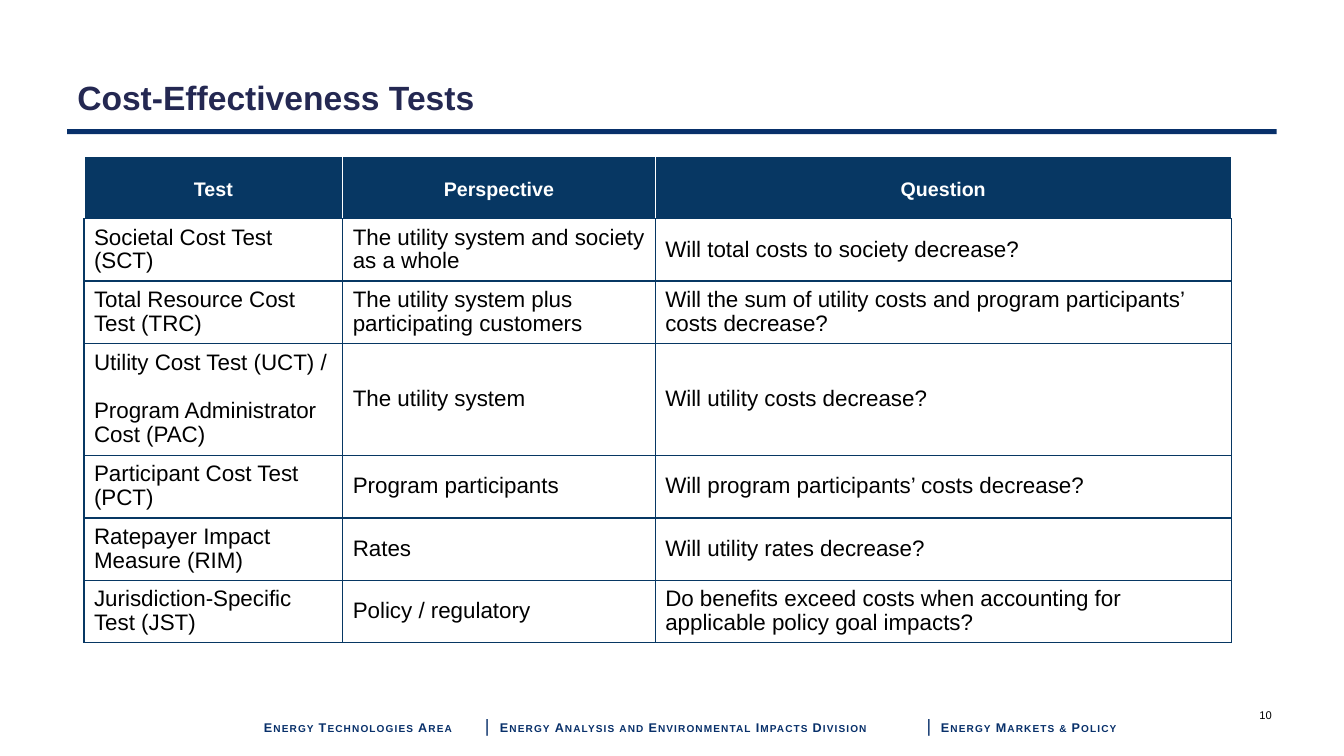
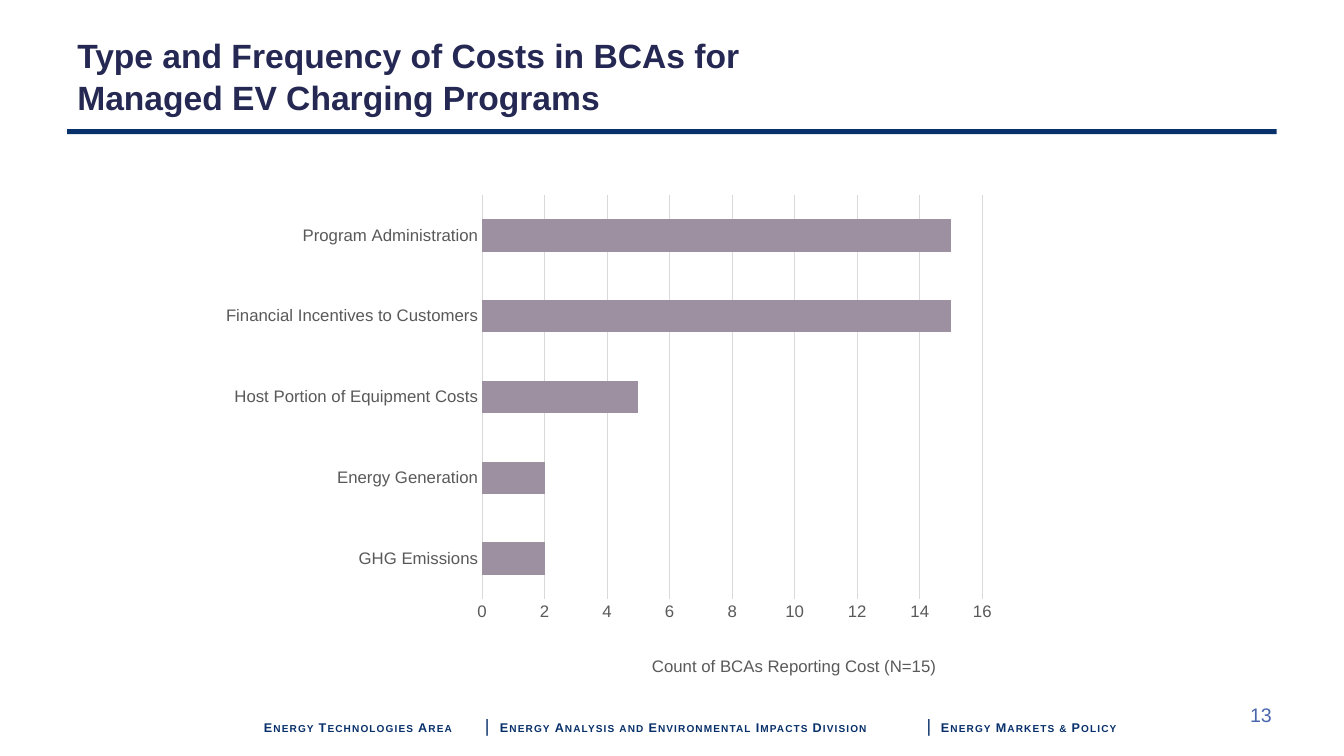
"""Builds two slides on cost-effectiveness tests and managed charging costs."""
import functools

import lxml.etree
import pptx
import pptx.chart.data
import pptx.dml.color
import pptx.enum.chart
import pptx.enum.shapes
import pptx.enum.text
import pptx.oxml.ns
import pptx.util

RGBColor = pptx.dml.color.RGBColor
ALIGN = pptx.enum.text.PP_ALIGN
ANCHOR = pptx.enum.text.MSO_ANCHOR
TICK = pptx.enum.chart.XL_TICK_MARK

NAVY = RGBColor(0x08, 0x30, 0x6A)
TABLE_NAVY = RGBColor(0x07, 0x37, 0x63)
TITLE_INK = RGBColor(0x24, 0x28, 0x52)
PAGE_BLUE = RGBColor(0x4A, 0x66, 0xAC)
MAUVE = RGBColor(0x9D, 0x90, 0xA0)
AXIS_GRAY = RGBColor(0x59, 0x59, 0x59)
GRID_GRAY = RGBColor(0xD9, 0xD9, 0xD9)
BLACK = RGBColor(0, 0, 0)
WHITE = RGBColor(0xFF, 0xFF, 0xFF)

COLUMNS, ROWS = 160, 90
CELL = pptx.util.Inches(7.5) // ROWS


def grid(*counts):
    return [pptx.util.Emu(round(count * CELL)) for count in counts]


def apply(target, values):
    for name, value in values.items():
        *parents, last = name.split(".")
        setattr(functools.reduce(getattr, parents, target), last, value)


def text_format(size, color, bold=False):
    return {"name": "Arial", "size": pptx.util.Pt(size), "bold": bold, "color.rgb": color}


def add_element(parent, tag, position=None, **attributes):
    element = lxml.etree.Element(pptx.oxml.ns.qn(tag), attributes)
    parent.insert(len(parent) if position is None else position, element)
    return element


def set_layout(parent, position, **shares):
    for old in parent.findall(pptx.oxml.ns.qn("c:layout")):
        parent.remove(old)
    manual = add_element(add_element(parent, "c:layout", position), "c:manualLayout")
    if "w" in shares:
        add_element(manual, "c:layoutTarget", val="inner")
    for axis in "xy":
        add_element(manual, f"c:{axis}Mode", val="edge")
    for name, share in shares.items():
        add_element(manual, f"c:{name}", val=str(share))


class Deck:
    """Holds the shared style and the current slide."""

    title_font = text_format(24, TITLE_INK, True)
    header_font = text_format(14, WHITE, True)
    body_font = text_format(16, BLACK)
    axis_font = text_format(12, AXIS_GRAY)
    footer_fonts = {"|": text_format(16, NAVY)}
    footer_font = text_format(9, NAVY, True)
    footer_parts = ["Energy Technologies Area", "|",
                    "Energy Analysis and Environmental Impacts Division", "|",
                    "Energy Markets & Policy"]
    footer_tabs = [26.3, 28.1, 78.9, 80.6]

    def __init__(self):
        self.presentation = pptx.Presentation()
        apply(self.presentation, {"slide_width": CELL * COLUMNS, "slide_height": CELL * ROWS})
        self.slide = None

    def new_slide(self, title, page, page_font):
        self.slide = self.presentation.slides.add_slide(self.presentation.slide_layouts[5])
        self.rule()
        self.footer()
        self.title(title)
        self.page_number(page, page_font)

    def rule(self):
        shape = self.slide.shapes.add_shape(
            pptx.enum.shapes.MSO_SHAPE.RECTANGLE, *grid(8, 15.36, 144, 0.6))
        shape.shadow.inherit = False
        shape.fill.solid()
        shape.fill.fore_color.rgb = NAVY
        shape.line.fill.background()

    def title(self, text):
        shape = self.slide.shapes.title
        height = 1.1 + 4.9 * len(text.splitlines())
        place = zip(("left", "top", "width", "height"), grid(8, 14.6 - height, 144, height))
        apply(shape, dict(place))
        apply(shape.text_frame, {"vertical_anchor": ANCHOR.BOTTOM, "word_wrap": True,
                                 "auto_size": pptx.enum.text.MSO_AUTO_SIZE.NONE})
        paragraph = shape.text_frame.paragraphs[0]
        paragraph.text = text
        apply(paragraph, {"alignment": ALIGN.LEFT, "line_spacing": 1.04})
        for run in paragraph.runs:
            apply(run.font, self.title_font)

    def text_box(self, place, frame_format):
        frame = self.slide.shapes.add_textbox(*grid(*place)).text_frame
        apply(frame, {"word_wrap": True, **frame_format})
        return frame.paragraphs[0]

    def footer(self):
        paragraph = self.text_box((30.24, 83.9, 110, 5.8), {})
        tabs = add_element(paragraph._p.get_or_add_pPr(), "a:tabLst")
        for stop in grid(*self.footer_tabs):
            add_element(tabs, "a:tab", pos=str(stop), algn="l")
        for index, part in enumerate(self.footer_parts):
            run = paragraph.add_run()
            run.text = "\t" + part if index else part
            apply(run.font, self.footer_fonts.get(part, self.footer_font))
            run._r.get_or_add_rPr().attrib.update({"cap": "small", "spc": "80"})

    def page_number(self, number, font):
        paragraph = self.text_box((146.6, 82.7, 6, 4.8), {"vertical_anchor": ANCHOR.MIDDLE})
        paragraph.alignment = ALIGN.RIGHT
        run = paragraph.add_run()
        run.text = str(number)
        apply(run.font, font)

    def cell(self, cell, text, is_header):
        cell.fill.solid()
        cell.fill.fore_color.rgb = TABLE_NAVY if is_header else WHITE
        side, edge = (0.07, 0) if is_header else (0.1, 0.05)
        side, edge = pptx.util.Inches(side), pptx.util.Inches(edge)
        apply(cell, {"margin_left": side, "margin_right": side, "margin_top": edge,
                     "margin_bottom": edge, "vertical_anchor": ANCHOR.MIDDLE})
        cell.text_frame.text = text
        for index, paragraph in enumerate(cell.text_frame.paragraphs):
            apply(paragraph, {"alignment": ALIGN.CENTER if is_header else ALIGN.LEFT,
                              "line_spacing": 1.25 if is_header else 0.96})
            if index:
                paragraph.space_before = pptx.util.Pt(17.6)
            apply(paragraph.runs[0].font, self.header_font if is_header else self.body_font)
        for position, border in enumerate("LRTB"):
            color = WHITE if is_header and border != "B" else TABLE_NAVY
            line = add_element(cell._tc.get_or_add_tcPr(), f"a:ln{border}", position, w="12700")
            add_element(add_element(line, "a:solidFill"), "a:srgbClr", val=str(color))

    def table(self, left, top, widths, heights, rows):
        place = grid(left, top, sum(widths), sum(heights))
        table = self.slide.shapes.add_table(len(rows), len(widths), *place).table
        table.horz_banding = False
        for column, width in zip(table.columns, grid(*widths)):
            column.width = width
        for row, height, texts in zip(table.rows, grid(*heights), rows):
            row.height = height
            for cell, text in zip(row.cells, texts):
                self.cell(cell, text, texts is rows[0])

    def bar_chart(self, place, counts, axis_title):
        data = pptx.chart.data.CategoryChartData()
        data.categories = list(counts)
        data.add_series("Series 1", list(counts.values()))
        chart = self.slide.shapes.add_chart(
            pptx.enum.chart.XL_CHART_TYPE.BAR_STACKED, *grid(*place), data).chart
        apply(chart, {"has_legend": False, "has_title": False})
        apply(chart.font, self.axis_font)
        plot = chart.plots[0]
        apply(plot, {"gap_width": 150, "overlap": 100, "vary_by_categories": False})
        fill = plot.series[0].format.fill
        fill.solid()
        fill.fore_color.rgb = MAUVE
        categories, values = chart.category_axis, chart.value_axis
        for axis in (categories, values):
            apply(axis, {"major_tick_mark": TICK.NONE, "minor_tick_mark": TICK.NONE})
            apply(axis.tick_labels.font, self.axis_font)
        apply(values, {"minimum_scale": 0, "maximum_scale": 16, "major_unit": 2,
                       "has_major_gridlines": True})
        for line in (categories.format.line, values.major_gridlines.format.line):
            apply(line, {"width": pptx.util.Pt(0.75), "color.rgb": GRID_GRAY})
        values.format.line.fill.background()
        run = values.axis_title.text_frame.paragraphs[0].add_run()
        run.text = axis_title
        apply(run.font, self.axis_font)
        set_layout(values.axis_title._element, 1, x=0.55, y=0.95)
        plot_area = chart._chartSpace.chart.plotArea
        set_layout(plot_area, 0, x=0.341, y=0.021, w=0.627, h=0.82)


TESTS = [
    ("Test", "Perspective", "Question"),
    ("Societal Cost Test (SCT)", "The utility system and society as a whole",
     "Will total costs to society decrease?"),
    ("Total Resource Cost Test (TRC)", "The utility system plus participating customers",
     "Will the sum of utility costs and program participants’ costs decrease?"),
    ("Utility Cost Test (UCT) /\nProgram Administrator Cost (PAC)", "The utility system",
     "Will utility costs decrease?"),
    ("Participant Cost Test (PCT)", "Program participants",
     "Will program participants’ costs decrease?"),
    ("Ratepayer Impact Measure (RIM)", "Rates", "Will utility rates decrease?"),
    ("Jurisdiction-Specific Test (JST)", "Policy / regulatory",
     "Do benefits exceed costs when accounting for applicable policy goal impacts?"),
]
COST_COUNTS = {
    "GHG Emissions": 2,
    "Energy Generation": 2,
    "Host Portion of Equipment Costs": 5,
    "Financial Incentives to Customers": 15,
    "Program Administration": 15,
}


def main():
    deck = Deck()
    deck.new_slide("Cost-Effectiveness Tests", 10, text_format(8, BLACK))
    heights = [13 if "\n" in row[0] else 7.43 for row in TESTS]
    deck.table(10, 18.6, [30.8, 37.2, 68.6], heights, TESTS)
    deck.new_slide("Type and Frequency of Costs in BCAs for\nManaged EV Charging Programs",
                   13, text_format(14, PAGE_BLUE))
    deck.bar_chart((25, 22, 95, 59), COST_COUNTS, "Count of BCAs Reporting Cost (N=15)")
    deck.presentation.save("out.pptx")


if __name__ == "__main__":
    main()
